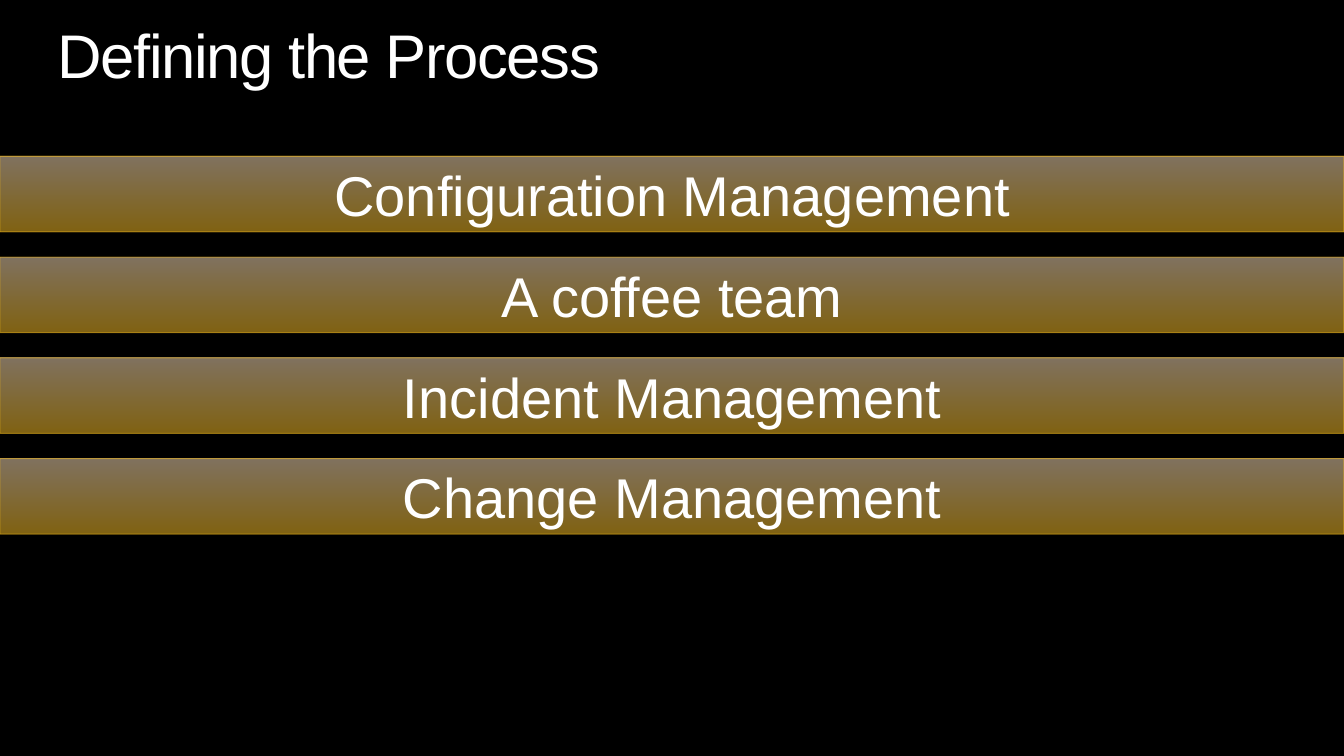
from dataclasses import dataclass

import pptx
import pptx.dml.color
import pptx.enum.dml
import pptx.enum.shapes
import pptx.enum.text
import pptx.oxml
import pptx.oxml.ns
import pptx.util
from pptx.util import Inches


@dataclass(frozen=True)
class Theme:
    font: str = "Arial"
    background: str = "000000"
    text: str = "FFFFFF"
    band_bottom: str = "FFC425"
    band_top: str = "FFE4BE"
    band_line: str = "FFC21F"
    title_size: int = 44
    band_size: int = 40


THEME = Theme()
PROCESSES = [
    "Configuration Management",
    "A coffee team",
    "Incident Management",
    "Change Management",
]
BAND_EFFECTS = (
    f'<a:effectLst {pptx.oxml.ns.nsdecls("a")}>'
    '<a:outerShdw blurRad="40000" dist="23000" dir="5400000" rotWithShape="0">'
    '<a:srgbClr val="000000"><a:alpha val="35000"/></a:srgbClr>'
    "</a:outerShdw></a:effectLst>"
)


def rgb(value):
    return pptx.dml.color.RGBColor.from_string(value)


def format_text(para, size):
    for span in para.runs:
        span.font.name = THEME.font
        span.font.size = pptx.util.Pt(size)
        span.font.color.rgb = rgb(THEME.text)


def make_half_transparent(element):
    """Give every explicit colour under the element 50% opacity."""
    for colour in element.iter(pptx.oxml.ns.qn("a:srgbClr")):
        colour.append(pptx.oxml.parse_xml(
            f'<a:alpha {pptx.oxml.ns.nsdecls("a")} val="50000"/>'))


def place_title(page, text, left, top, width, height):
    title = page.shapes.title
    title.left, title.top, title.width, title.height = left, top, width, height
    frame = title.text_frame
    frame.text = text
    frame.margin_left = frame.margin_right = 0
    frame.margin_top = frame.margin_bottom = 0
    frame.vertical_anchor = pptx.enum.text.MSO_ANCHOR.TOP
    frame.auto_size = pptx.enum.text.MSO_AUTO_SIZE.SHAPE_TO_FIT_TEXT
    frame.word_wrap = True
    para = frame.paragraphs[0]
    para.alignment = pptx.enum.text.PP_ALIGN.LEFT
    para.line_spacing = 0.9
    format_text(para, THEME.title_size)
    # Tighten the letters by one point
    para.runs[0].font._element.set("spc", "-100")


def add_band(page, text, left, top, width, height):
    band = page.shapes.add_shape(
        pptx.enum.shapes.MSO_SHAPE.RECTANGLE, left, top, width, height)

    # Fill and outline
    band.fill.gradient()
    band.fill.gradient_angle = 90
    stops = band.fill.gradient_stops
    for stop, position, colour in zip(
            stops, (0, 1), (THEME.band_bottom, THEME.band_top)):
        stop.position = position
        stop.color.rgb = rgb(colour)
    band.line.color.rgb = rgb(THEME.band_line)
    band.line.width = pptx.util.Pt(0.75)
    band.line.dash_style = pptx.enum.dml.MSO_LINE.SOLID
    properties = band._element.spPr
    make_half_transparent(properties)

    # Soft shadow below
    properties.append(pptx.oxml.parse_xml(BAND_EFFECTS))

    # Label
    frame = band.text_frame
    frame.text = text
    frame.word_wrap = True
    frame.vertical_anchor = pptx.enum.text.MSO_ANCHOR.MIDDLE
    para = frame.paragraphs[0]
    para.alignment = pptx.enum.text.PP_ALIGN.CENTER
    format_text(para, THEME.band_size)


def add_bands(page, labels, left, top, width, height, pitch):
    for row, label in enumerate(labels):
        add_band(page, label, left, top + row * pitch, width, height)


def main():
    deck = pptx.Presentation()
    deck.slide_width = Inches(13.33)
    deck.slide_height = Inches(7.5)
    page = deck.slides.add_slide(deck.slide_layouts.get_by_name("Title Only"))
    page.background.fill.solid()
    page.background.fill.fore_color.rgb = rgb(THEME.background)

    place_title(page, "Defining the Process",
                Inches(0.57), Inches(0.25), Inches(12.19), Inches(0.67))
    add_bands(page, PROCESSES, Inches(0), Inches(1.55),
              deck.slide_width, Inches(0.75), pitch=Inches(1))
    deck.save("out.pptx")


if __name__ == "__main__":
    main()
